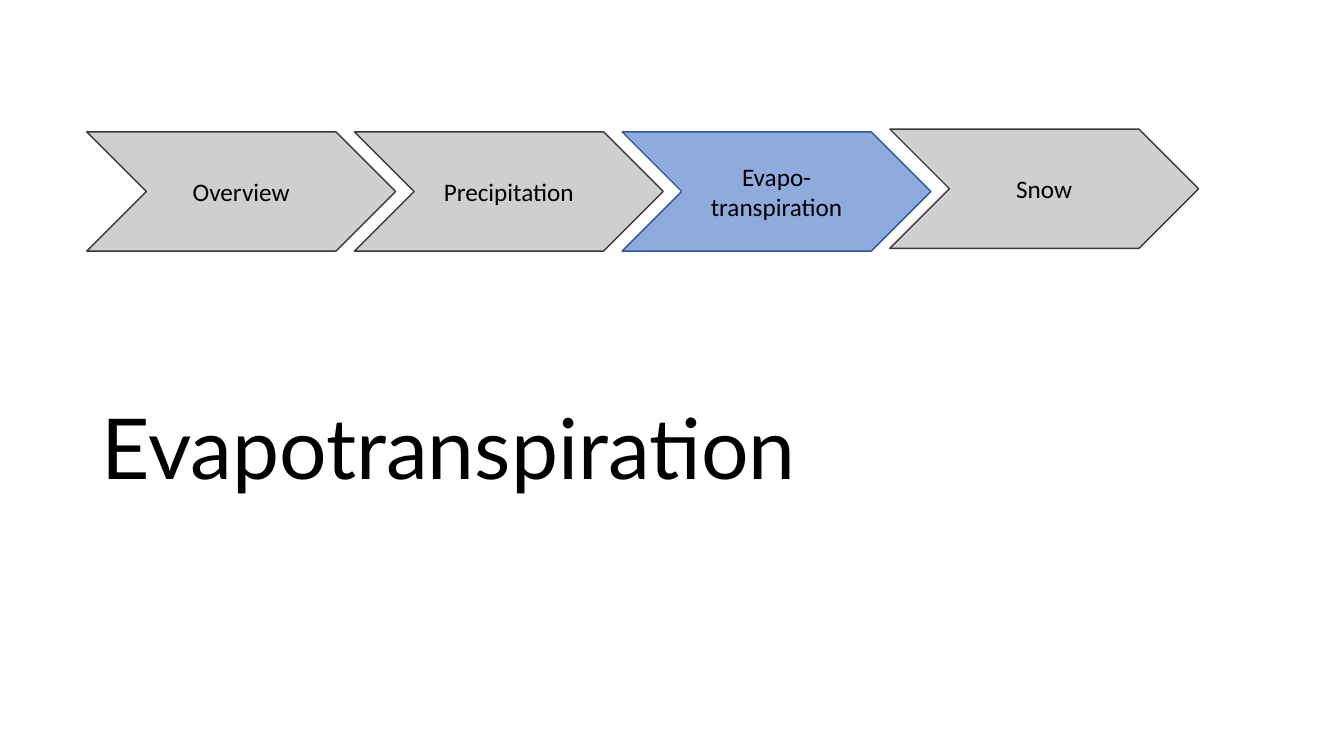
"""Builds a section slide: a chevron progress bar above the section title."""
import pptx
import pptx.dml.color
import pptx.enum.shapes
import pptx.enum.text
import pptx.util

Pt = pptx.util.Pt
SHAPE = pptx.enum.shapes.MSO_SHAPE
ALIGN = pptx.enum.text.PP_ALIGN
ANCHOR = pptx.enum.text.MSO_ANCHOR


def rgb(value):
    return pptx.dml.color.RGBColor.from_string(value)


class Deck:
    ink = "000000"
    normal = ("D0CECE", "3B3838")
    active = ("8FAADC", "2F5597")

    def __init__(self, prs):
        self.s = prs.slides.add_slide(prs.slide_layouts[6])

    def add_text(self, tf, text, font, size, align, anchor):
        tf.word_wrap = True
        tf.vertical_anchor = anchor
        p = tf.paragraphs[0]
        p.alignment = align
        r = p.add_run()
        r.text = text
        r.font.name = font
        r.font.size = Pt(size)
        r.font.color.rgb = rgb(self.ink)
        return p

    def add_title(self, text, x, y, w, h):
        sp = self.s.shapes.add_textbox(Pt(x), Pt(y), Pt(w), Pt(h))
        p = self.add_text(sp.text_frame, text, "Lato", 60, ALIGN.LEFT, ANCHOR.BOTTOM)
        p.line_spacing = 0.9

    def add_chevron(self, text, x, y, w, h, colors):
        sp = self.s.shapes.add_shape(SHAPE.CHEVRON, Pt(x), Pt(y), Pt(w), Pt(h))
        sp.shadow.inherit = False
        fill, line = colors
        sp.fill.solid()
        sp.fill.fore_color.rgb = rgb(fill)
        sp.line.color.rgb = rgb(line)
        sp.line.width = Pt(1)
        self.add_text(sp.text_frame, text, "Calibri", 18, ALIGN.CENTER, ANCHOR.MIDDLE)


def main():
    prs = pptx.Presentation()
    prs.slide_width, prs.slide_height = Pt(960), Pt(540)
    deck = Deck(prs)
    deck.add_title("Evapotranspiration", 65.5, 134.6, 828, 224.6)
    steps = [
        ("Overview", 94.2, deck.normal),
        ("Precipitation", 94.2, deck.normal),
        ("Evapo-transpiration", 94.2, deck.active),
        ("Snow", 92.2, deck.normal),
    ]
    for i, (label, y, colors) in enumerate(steps):
        deck.add_chevron(label, 62 + 191.2 * i, y, 220.6, 85.2, colors)
    prs.save("out.pptx")


if __name__ == "__main__":
    main()
